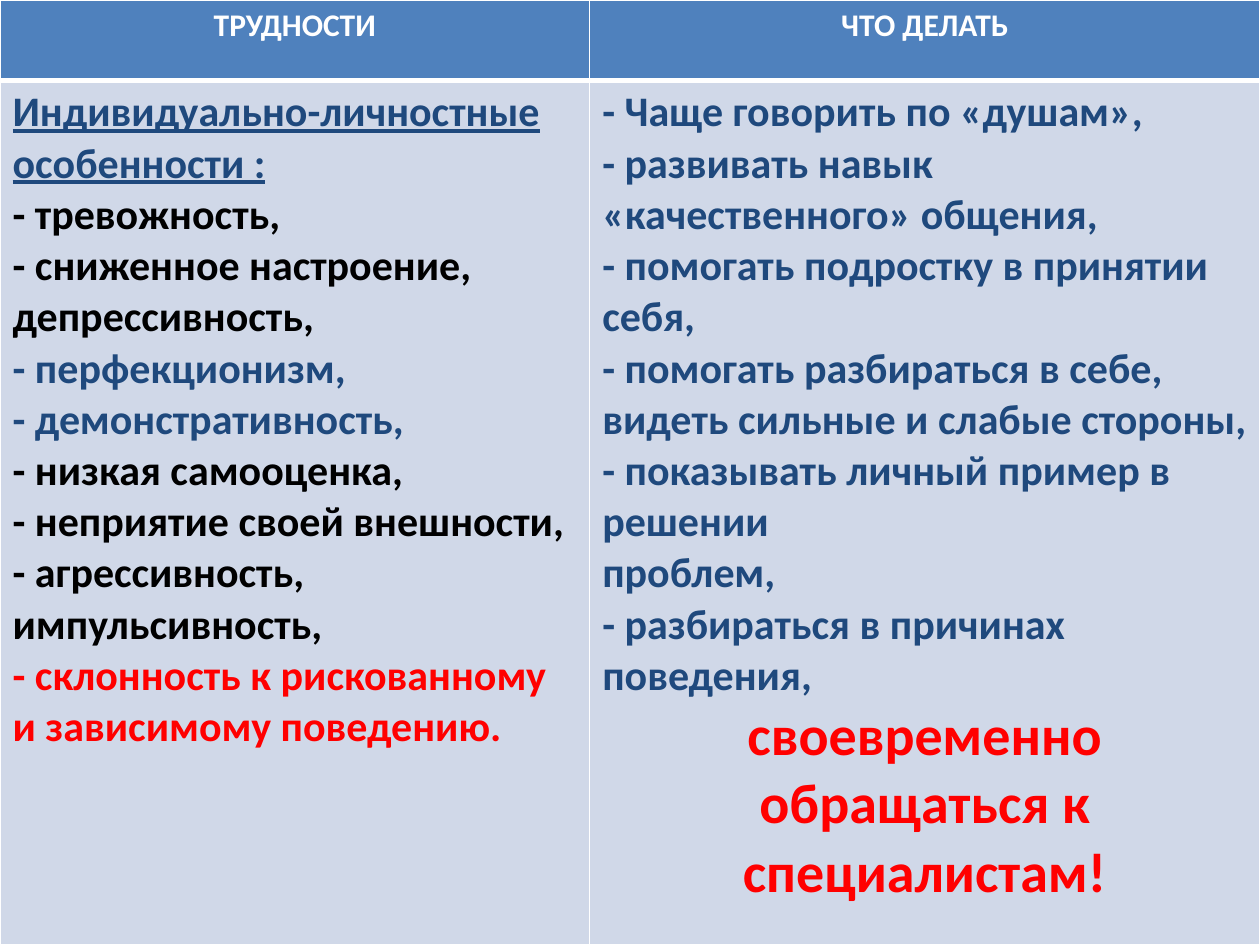
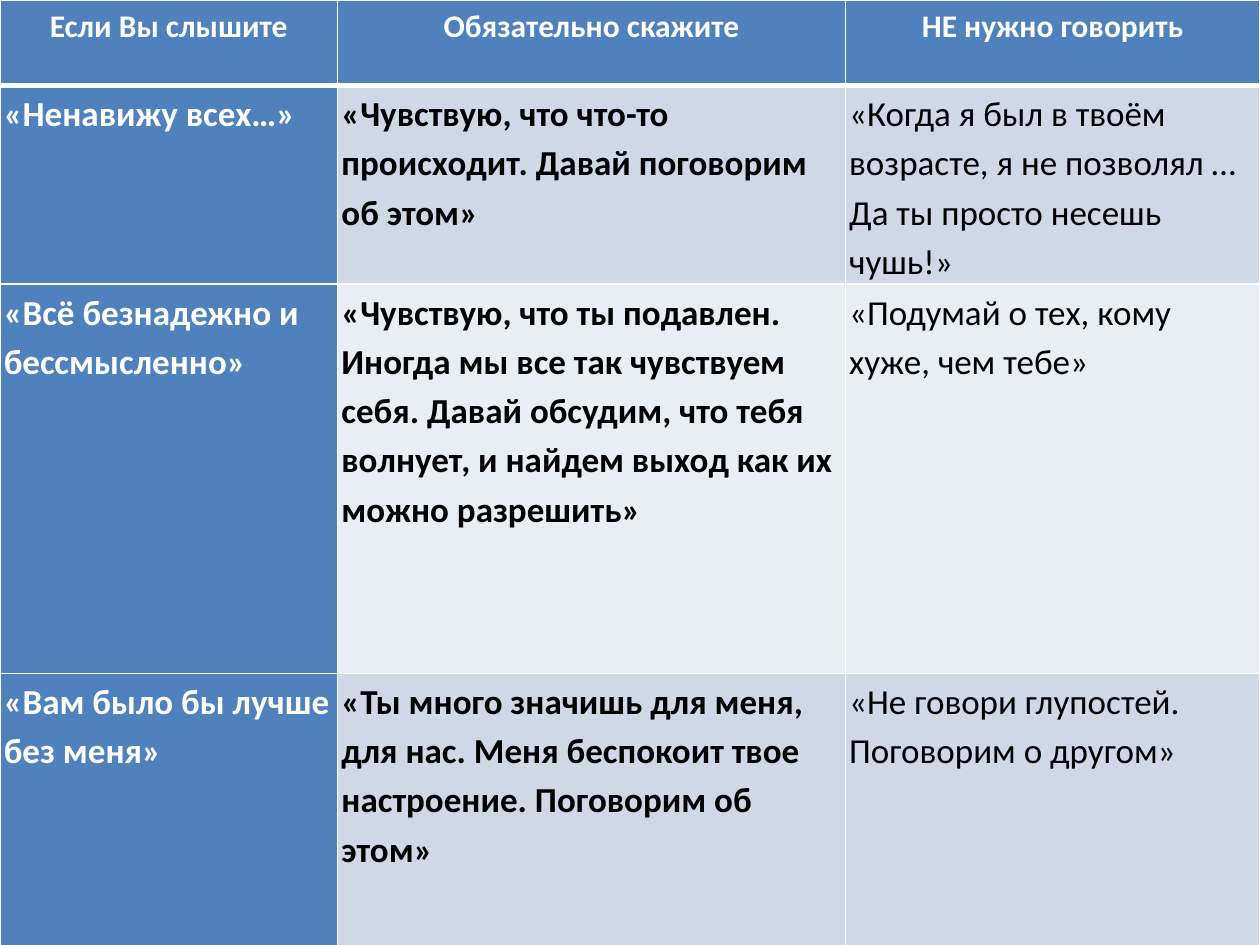
from dataclasses import dataclass
from lxml.etree import SubElement
from pptx import Presentation
from pptx.dml.color import RGBColor
from pptx.enum.text import PP_ALIGN
from pptx.oxml.ns import qn
from pptx.util import Inches, Pt


@dataclass(frozen=True)
class Theme:
    font: str = "Calibri"
    white: str = "FFFFFF"
    black: str = "000000"
    navy: str = "1F497D"
    red: str = "FF0000"
    header: str = "4F81BD"
    band_dark: str = "D0D8E8"
    band_light: str = "E9EDF4"
    header_size: int = 18
    phrase_size: int = 20
    list_size: int = 24
    appeal_size: int = 32
    thin: int = 1
    thick: int = 3


T = Theme()

DIFFICULTY_HEADERS = ["ТРУДНОСТИ", "ЧТО ДЕЛАТЬ"]
DIFFICULTIES = [
    ("Индивидуально-личностные особенности :", dict(color=T.navy, underline=True)),
    ("- тревожность,", {}),
    ("- сниженное настроение, депрессивность,", {}),
    ("- перфекционизм,", dict(color=T.navy)),
    ("- демонстративность,", dict(color=T.navy)),
    ("- низкая самооценка,", {}),
    ("- неприятие своей внешности,", {}),
    ("- агрессивность, импульсивность,", {}),
    ("- склонность к рискованному и зависимому поведению.", dict(color=T.red)),
]
ADVICE = [
    "- Чаще говорить по «душам»,",
    "- развивать навык «качественного» общения,",
    "- помогать подростку в принятии себя,",
    "- помогать разбираться в себе,",
    "видеть сильные и слабые стороны,",
    "- показывать личный пример в решении",
    "проблем,",
    "- разбираться в причинах поведения,",
]
APPEAL = "своевременно обращаться к специалистам!"

PHRASE_HEADERS = ["Если Вы слышите", "Обязательно скажите", "НЕ нужно говорить"]
PHRASES = [
    ("«Ненавижу всех…»",
     "«Чувствую, что что-то происходит. Давай поговорим об этом»",
     "«Когда я был в твоём возрасте, я не позволял … Да ты просто несешь чушь!»"),
    ("«Всё безнадежно и бессмысленно»",
     "«Чувствую, что ты подавлен. Иногда мы все так чувствуем себя. "
     "Давай обсудим, что тебя волнует, и найдем выход как их можно разрешить»",
     "«Подумай о тех, кому хуже, чем тебе»"),
    ("«Вам было бы лучше без меня»",
     "«Ты много значишь для меня, для нас. Меня беспокоит твое настроение. Поговорим об этом»",
     "«Не говори глупостей. Поговорим о другом»"),
]
PHRASE_STYLES = [dict(color=T.white), {}, dict(bold=False)]


def write(p, text, size=T.list_size, color=T.black, bold=True, underline=False,
          align=PP_ALIGN.LEFT, spacing=None):
    p.alignment = align
    p.line_spacing = spacing
    r = p.add_run()
    r.text = text
    f = r.font
    f.name, f.size, f.bold, f.underline = T.font, Pt(size), bold, underline
    f.color.rgb = RGBColor.from_string(color)


def add_borders(cell, row):
    widths = {"L": T.thin, "R": T.thin,
              "T": T.thick if row == 1 else T.thin,
              "B": T.thick if row == 0 else T.thin}
    tc_pr = cell._tc.get_or_add_tcPr()
    for side, width in widths.items():
        ln = SubElement(tc_pr, qn(f"a:ln{side}"), w=str(Pt(width)))
        SubElement(SubElement(ln, qn("a:solidFill")), qn("a:srgbClr"), val=T.white)


def add_grid(prs, headers, body, cols, rows, first_col=T.band_dark, insets=None, spacing=None):
    s = prs.slides.add_slide(prs.slide_layouts[6])
    head = [[(h, dict(size=T.header_size, color=T.white, align=PP_ALIGN.CENTER))]
            for h in headers]
    table = s.shapes.add_table(len(rows), len(cols), 0, 0,
                               Inches(sum(cols)), Inches(sum(rows))).table
    for col, width in zip(table.columns, cols):
        col.width = Inches(width)
    for i, (height, line) in enumerate(zip(rows, [head] + body)):
        table.rows[i].height = Inches(height)
        band = T.band_dark if i % 2 else T.band_light
        for j, paragraphs in enumerate(line):
            cell = table.cell(i, j)
            add_borders(cell, i)
            cell.fill.solid()
            fill = T.header if i == 0 else first_col if j == 0 else band
            cell.fill.fore_color.rgb = RGBColor.from_string(fill)
            if insets:
                (cell.margin_left, cell.margin_top,
                 cell.margin_right, cell.margin_bottom) = map(Inches, insets)
            tf = cell.text_frame
            for k, (text, style) in enumerate(paragraphs):
                p = tf.add_paragraph() if k else tf.paragraphs[0]
                write(p, text, spacing=spacing, **style)


def main():
    prs = Presentation()
    prs.slide_width, prs.slide_height = Inches(10), Inches(7.5)

    advice = [(text, dict(color=T.navy)) for text in ADVICE]
    advice.append((APPEAL, dict(size=T.appeal_size, color=T.red, align=PP_ALIGN.CENTER)))
    add_grid(prs, DIFFICULTY_HEADERS, [[DIFFICULTIES, advice]],
             cols=[4.68, 5.32], rows=[0.64, 6.86])

    phrases = [[[(text, dict(size=T.phrase_size, **style))]
                for text, style in zip(line, PHRASE_STYLES)] for line in PHRASES]
    add_grid(prs, PHRASE_HEADERS, phrases,
             cols=[2.68, 4.03, 3.29], rows=[0.68, 1.57, 3.09, 2.16],
             first_col=T.header, insets=(0.03, 0.01, 0.03, 0), spacing=1.15)

    prs.save("out.pptx")


if __name__ == "__main__":
    main()
